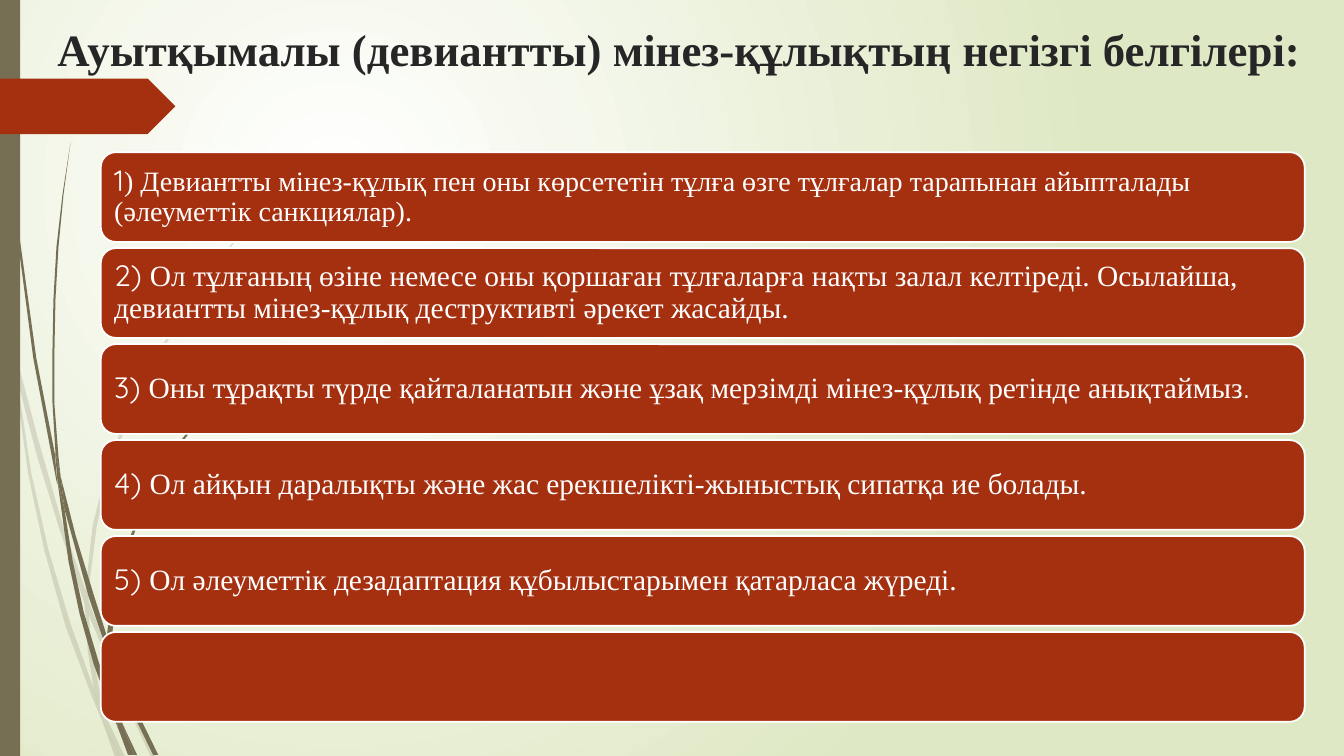
from dataclasses import dataclass
from pptx import Presentation
from pptx.dml.color import RGBColor
from pptx.enum.shapes import MSO_SHAPE
from pptx.enum.text import MSO_ANCHOR, PP_ALIGN
from pptx.oxml import parse_xml
from pptx.oxml.ns import nsdecls, qn
from pptx.oxml.xmlchemy import OxmlElement
from pptx.util import Inches, Pt


@dataclass(frozen=True)
class Theme:
    white: str = "FFFFFF"
    meadow: str = "DFE8C4"
    olive: str = "766F54"
    rust: str = "A53010"
    ink: str = "262626"
    serif: str = "Times New Roman"
    sans: str = "Quicksand"
    title_size: float = 32
    item_size: float = 21
    first_item_size: float = 20
    outline: float = 1.25


THEME = Theme()

TITLE = "Ауытқымалы (девиантты) мінез-құлықтың негізгі белгілері:"

# Each item: number in sans, sentence in serif, closing mark in sans, sentence size
ITEMS = [
    ("1", ") Девиантты мінез-құлық пен оны көрсететін тұлға өзге тұлғалар тарапынан "
     "айыпталады (әлеуметтік санкциялар).", "", THEME.first_item_size),
    ("2) ", "Ол тұлғаның өзіне немесе оны қоршаған тұлғаларға нақты залал келтіреді. "
     "Осылайша, девиантты мінез-құлық деструктивті әрекет жасайды.", "", THEME.item_size),
    ("3) ", "Оны тұрақты түрде қайталанатын және ұзақ мерзімді мінез-құлық ретінде "
     "анықтаймыз", ".", THEME.item_size),
    ("4) ", "Ол айқын даралықты және жас ерекшелікті-жыныстық сипатқа ие болады.",
     "", THEME.item_size),
    ("5) ", "Ол әлеуметтік дезадаптация құбылыстарымен қатарласа жүреді.",
     "", THEME.item_size),
    None,
]

# Grass blades: outline points in hundredths of an inch
PALE_BLADES = [
    [(11, 350), (9, 322), (0, 282), (0, 299), (10, 344)],
    [(58, 522), (84, 599), (85, 586), (62, 520), (37, 433), (14, 345), (17, 376), (36, 450)],
    [(92, 607), (88, 596), (88, 610), (123, 694), (150, 751), (155, 751), (127, 692)],
    [(119, 751), (124, 751), (105, 711)],
    [(93, 683), (70, 619), (48, 545), (31, 469), (17, 376), (11, 350), (28, 470),
     (44, 546), (65, 621), (92, 693), (101, 714), (99, 707)],
    [(84, 599), (87, 646), (93, 683), (96, 692), (105, 711), (103, 706), (91, 646),
     (88, 610), (88, 608)],
    [(88, 584), (96, 522), (110, 462), (132, 405), (160, 349), (192, 296), (229, 245),
     (268, 198), (290, 175), (312, 154), (312, 153), (289, 175), (268, 197), (228, 244),
     (190, 294), (158, 348), (129, 403), (107, 461), (92, 521), (85, 584), (85, 586),
     (88, 596)],
    [(101, 714), (114, 751), (119, 751)],
    [(88, 608), (88, 596), (85, 586), (84, 599)],
    [(96, 692), (93, 683), (99, 707), (101, 714), (119, 751), (105, 711)],
]
DARK_BLADES = [
    [(7, 110), (17, 233), (33, 355), (56, 477), (57, 481), (55, 457), (55, 453),
     (36, 355), (19, 232), (8, 109), (5, 48), (4, 0), (3, 0), (4, 48)],
    [(88, 592), (106, 645), (106, 631), (93, 590), (75, 531), (60, 472), (64, 505)],
    [(113, 649), (110, 641), (111, 656), (132, 708), (152, 749), (157, 749), (136, 706)],
    [(110, 691), (98, 657), (83, 607), (72, 556), (64, 505), (57, 477), (68, 557),
     (79, 609), (93, 659), (111, 708), (117, 722), (116, 717)],
    [(60, 472), (58, 453), (54, 401), (54, 349), (55, 297), (58, 245), (63, 193),
     (70, 141), (62, 193), (56, 245), (53, 297), (52, 349), (52, 399), (55, 449)],
    [(133, 749), (136, 749), (122, 719)],
    [(57, 477), (64, 505), (60, 472), (55, 449), (55, 453)],
    [(111, 633), (115, 592), (125, 552), (139, 513), (158, 476), (180, 440), (205, 406),
     (231, 374), (245, 359), (261, 344), (260, 344), (245, 358), (231, 373), (204, 405),
     (178, 439), (156, 474), (137, 512), (122, 551), (111, 590), (106, 631), (110, 641)],
    [(117, 722), (127, 749), (131, 749)],
    [(106, 645), (110, 691), (116, 706), (122, 719), (121, 716), (111, 656), (109, 651)],
    [(116, 706), (110, 691), (116, 717), (117, 722), (130, 749), (133, 749), (122, 719)],
]


def style_shape(shape, fill, line=None, opacity=None):
    shape.shadow.inherit = False
    shape.fill.solid()
    shape.fill.fore_color.rgb = RGBColor.from_string(fill)
    if opacity is not None:
        alpha = OxmlElement("a:alpha")
        alpha.set("val", str(opacity * 1000))
        shape.element.spPr.find(".//" + qn("a:srgbClr")).append(alpha)
    if line:
        shape.line.color.rgb = RGBColor.from_string(line)
        shape.line.width = Pt(THEME.outline)
    else:
        shape.line.fill.background()


def add_text(paragraph, text, *, font, size, color, bold=False):
    run = paragraph.add_run()
    run.text = text
    run.font.name = font
    run.font.size = Pt(size)
    run.font.bold = bold
    run.font.color.rgb = RGBColor.from_string(color)


def paint_background(slide):
    fill = slide.background.fill
    fill.gradient()
    for stop, color in zip(fill.gradient_stops, (THEME.white, THEME.meadow)):
        stop.color.rgb = RGBColor.from_string(color)
    fill.gradient_stops[0].position = 0
    fill.gradient_stops[1].position = 1
    # Radial gradient centred in the upper left quarter
    linear = slide.element.find(".//" + qn("a:gradFill") + "/" + qn("a:lin"))
    radial = parse_xml(
        f'<a:path {nsdecls("a")} path="circle">'
        '<a:fillToRect l="50000" t="50000" r="100000" b="100000"/></a:path>')
    linear.getparent().replace(linear, radial)


def add_blades(slide, blades, left, top, opacity=None):
    for first, *rest in blades:
        builder = slide.shapes.build_freeform(*first, scale=Inches(0.01))
        builder.add_line_segments(rest, close=True)
        style_shape(builder.convert_to_shape(Inches(left), Inches(top)),
                    THEME.olive, opacity=opacity)


def add_decoration(slide, left, top, height):
    # Grass, side bar and arrow tab
    add_blades(slide, PALE_BLADES, left, top, opacity=20)
    add_blades(slide, DARK_BLADES, left, top)
    bar = slide.shapes.add_shape(
        MSO_SHAPE.RECTANGLE, Inches(left), Inches(top), Inches(0.2), Inches(height))
    style_shape(bar, THEME.olive)
    tab = slide.shapes.add_shape(
        MSO_SHAPE.PENTAGON, Inches(left), Inches(top + 0.78), Inches(1.74), Inches(0.55))
    style_shape(tab, THEME.rust)


def add_title(slide, left, top, width, height):
    box = slide.shapes.add_textbox(
        Inches(left), Inches(top), Inches(width), Inches(height))
    box.text_frame.word_wrap = True
    add_text(box.text_frame.paragraphs[0], TITLE, font=THEME.serif,
             size=THEME.title_size, color=THEME.ink, bold=True)


def add_item(slide, item, left, top, width, height):
    card = slide.shapes.add_shape(
        MSO_SHAPE.ROUNDED_RECTANGLE, Inches(left), Inches(top), Inches(width), Inches(height))
    style_shape(card, THEME.rust, THEME.white)
    if item is None:
        return
    number, sentence, ending, size = item
    frame = card.text_frame
    frame.word_wrap = True
    frame.vertical_anchor = MSO_ANCHOR.MIDDLE
    frame.margin_left = frame.margin_right = Inches(0.09)
    frame.margin_top = frame.margin_bottom = Inches(0.09)
    paragraph = frame.paragraphs[0]
    paragraph.alignment = PP_ALIGN.LEFT
    paragraph.line_spacing = 0.9
    add_text(paragraph, number, font=THEME.sans, size=THEME.item_size, color=THEME.white)
    add_text(paragraph, sentence, font=THEME.serif, size=size, color=THEME.white)
    if ending:
        add_text(paragraph, ending, font=THEME.sans, size=size, color=THEME.white)


def add_item_list(slide, left, top, width, height, card_height=0.89):
    pitch = (height - card_height) / (len(ITEMS) - 1)
    for index, item in enumerate(ITEMS):
        add_item(slide, item, left, top + index * pitch, width, card_height)


def main():
    presentation = Presentation()
    presentation.slide_width = Inches(13.33)
    presentation.slide_height = Inches(7.5)
    slide = presentation.slides.add_slide(presentation.slide_layouts[6])
    paint_background(slide)
    add_decoration(slide, left=0, top=0, height=7.5)
    add_title(slide, left=0.47, top=0.17, width=12.86, height=1.25)
    add_item_list(slide, left=1, top=1.51, width=11.94, height=5.65)
    presentation.save("out.pptx")


if __name__ == "__main__":
    main()
